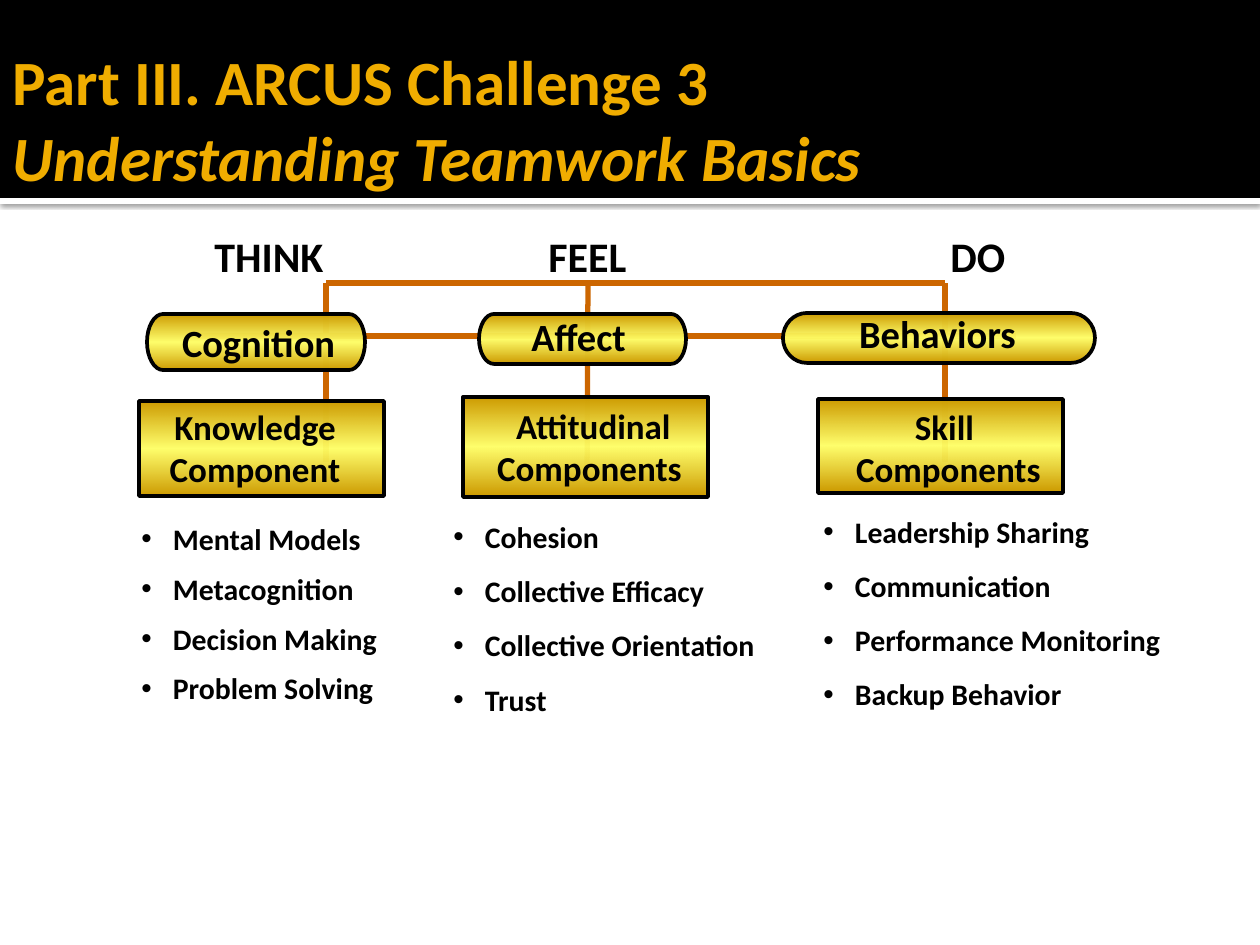
from lxml import etree
from pptx import Presentation
from pptx.dml.color import RGBColor
from pptx.enum.shapes import MSO_CONNECTOR, MSO_SHAPE
from pptx.enum.text import MSO_ANCHOR, MSO_AUTO_SIZE, PP_ALIGN
from pptx.oxml import parse_xml
from pptx.oxml.ns import nsdecls, qn
from pptx.util import Emu, Pt

RECT, STRAIGHT = MSO_SHAPE.RECTANGLE, MSO_CONNECTOR.STRAIGHT
LEFT, CENTER = PP_ALIGN.LEFT, PP_ALIGN.CENTER
FIXED, GROW = MSO_AUTO_SIZE.NONE, MSO_AUTO_SIZE.SHAPE_TO_FIT_TEXT
MIDDLE = MSO_ANCHOR.MIDDLE
FONT = "Calibri"
COLORS = {"band": "000000", "strip": "FFFFFF", "title": "F0AD00", "text": "000000",
          "connector": "CC6600", "outline": "000000", "gold": "CC9900", "yellow": "FFFF66"}
WIDTH, HEIGHT = 1260, 945
BAND_HEIGHT, STRIP_HEIGHT = 198, 6
ARC = 0.55  # control point distance of a quarter ellipse

TITLE_LINES = ("Part III. ARCUS Challenge 3", "Understanding Teamwork Basics")

# Every box is (left, top, width, height) in px.
COLUMNS = [
    {"heading": "THINK", "heading_box": (202, 224, 135, 63),
     "aspect": "Cognition", "pill": (147, 314, 218, 56), "end": 16,
     "aspect_box": (155, 319, 207, 47),
     "component": "Knowledge\vComponent", "card": (139, 401, 245, 95),
     "component_box": (165, 405, 180, 84), "component_wrap": False,
     "items": ["Mental Models", "Metacognition", "Decision Making", "Problem Solving"],
     "items_box": (129, 511, 301, 203), "gap": 6},
    {"heading": "FEEL", "heading_box": (536, 224, 105, 63),
     "aspect": "Affect", "pill": (479, 314, 207, 50), "end": 15,
     "aspect_box": (486, 313, 185, 47),
     "component": "Attitudinal\nComponents ", "card": (463, 397, 245, 100),
     "component_box": (494, 405, 199, 84), "component_wrap": True,
     "items": ["Cohesion", "Collective Efficacy", "Collective Orientation", "Trust"],
     "items_box": (441, 509, 349, 224), "gap": 8.5},
    {"heading": "DO", "heading_box": (938, 224, 81, 63),
     "aspect": "Behaviors", "pill": (783, 313, 312, 50), "end": 24,
     "aspect_box": (790, 310, 295, 47),
     "component": "Skill \nComponents", "card": (818, 399, 245, 94),
     "component_box": (847, 406, 203, 84), "component_wrap": True,
     "items": ["Leadership Sharing", "Communication", "Performance Monitoring",
               "Backup Behavior"],
     "items_box": (811, 504, 386, 224), "gap": 8.5},
]
CONNECTORS = [(197, 336, 1016, 336), (945, 462, 945, 283), (326, 462, 326, 283),
              (587, 484, 588, 283), (326, 283, 945, 283)]


def px(value):
    return Emu(round(value * 914400 / 126))


def place(box):
    return [px(value) for value in box]


def color(name):
    return RGBColor.from_string(COLORS[name])


def add_bar(slide, box, fill):
    bar = slide.shapes.add_shape(RECT, *place(box))
    bar.shadow.inherit = False
    bar.fill.solid()
    bar.fill.fore_color.rgb = color(fill)
    bar.line.fill.background()
    return bar


def add_connector(slide, ends):
    connector = slide.shapes.add_connector(STRAIGHT, *place(ends))
    connector.line.color.rgb = color("connector")
    connector.line.width = Pt(3)
    etree.SubElement(connector._element.spPr, qn("a:effectLst"))


def style_gold(shape):
    """Give a shape the gold-yellow-gold vertical gradient and black outline."""
    shape.shadow.inherit = False
    shape.fill.background()
    shape.line.color.rgb = color("outline")
    shape.line.width = Pt(2.13)
    properties = shape._element.spPr
    gradient = parse_xml(
        f'<a:gradFill rotWithShape="1" {nsdecls("a")}><a:gsLst>'
        f'<a:gs pos="0"><a:srgbClr val="{COLORS["gold"]}"/></a:gs>'
        f'<a:gs pos="50000"><a:srgbClr val="{COLORS["yellow"]}">'
        f'<a:alpha val="95000"/></a:srgbClr></a:gs>'
        f'<a:gs pos="100000"><a:srgbClr val="{COLORS["gold"]}"/></a:gs>'
        f'</a:gsLst><a:lin ang="5400000" scaled="1"/></a:gradFill>')
    properties.replace(properties.find(qn("a:noFill")), gradient)


def add_pill(slide, box, end):
    """Draw a bar whose two ends are half ellipses of the given width."""
    left, top, width, height = box
    right, bottom, middle = left + width, top + height, top + height / 2
    corners = [(left + end, bottom), (right - end, bottom), (right, middle),
               (right - end, top), (left + end, top), (left, middle), (left + end, bottom)]
    points = [(px(x), px(y)) for x, y in corners]
    builder = slide.shapes.build_freeform(*points[0])
    builder.add_line_segments(points[1:], close=True)
    pill = builder.convert_to_shape()
    segments = list(pill._element.spPr.iter(qn("a:lnTo")))
    for index in (1, 2, 4, 5):
        start, stop = points[index], points[index + 1]
        side = start if index in (2, 5) else stop
        tip = (side[0], stop[1] if side is start else start[1])
        controls = [[p + ARC * (t - p) for p, t in zip(point, tip)]
                    for point in (start, stop)]
        curve = etree.Element(qn("a:cubicBezTo"))
        for x, y in (*controls, stop):
            etree.SubElement(curve, qn("a:pt"), x=str(round(x - pill.left)),
                             y=str(round(y - pill.top)))
        segments[index].getparent().replace(segments[index], curve)
    style_gold(pill)


def add_text(slide, box, text, size, align=CENTER, wrap=True, inset=True, gap=None):
    """Add bold text; a gap in points makes the lines a bulleted list."""
    frame = slide.shapes.add_textbox(*place(box)).text_frame
    frame.word_wrap = wrap
    frame.auto_size = GROW
    if not inset:
        frame.margin_left = frame.margin_right = frame.margin_top = frame.margin_bottom = 0
    frame.text = text
    for index, paragraph in enumerate(frame.paragraphs):
        paragraph.alignment = align
        if gap:
            paragraph.line_spacing = 1.1
            if index:
                paragraph.space_before = Pt(gap)
            properties = paragraph._p.get_or_add_pPr()
            properties.set("marL", "228600")
            properties.set("indent", "-228600")
            etree.SubElement(properties, qn("a:buFont"), typeface="Arial")
            etree.SubElement(properties, qn("a:buChar"), char="•")
        paragraph.font.name = FONT
        paragraph.font.size = Pt(size)
        paragraph.font.bold = True
        paragraph.font.color.rgb = color("text")


def add_header(slide):
    strip = add_bar(slide, (0, BAND_HEIGHT, WIDTH, STRIP_HEIGHT), "strip")
    strip._element.spPr.find(qn("a:effectLst")).append(parse_xml(
        f'<a:outerShdw {nsdecls("a")} blurRad="31750" dist="10160" dir="5400000" '
        'rotWithShape="0"><a:srgbClr val="000000"><a:alpha val="60000"/></a:srgbClr>'
        '</a:outerShdw>'))
    add_bar(slide, (0, 0, WIDTH, BAND_HEIGHT), "band")

    title = slide.shapes.title
    title.left, title.top, title.width, title.height = place((0, 60, 1239, 116))
    slide.shapes._spTree.append(title._element)
    frame = title.text_frame
    frame.auto_size = FIXED
    frame.vertical_anchor = MIDDLE
    frame.margin_left = Pt(7.2)
    frame.margin_right = frame.margin_top = frame.margin_bottom = Pt(3.6)
    frame.text = "\v".join(TITLE_LINES)
    heading = frame.paragraphs[0]
    heading.alignment = LEFT
    heading.font.name = FONT
    heading.font.size = Pt(36)
    heading.font.bold = True
    heading.font.color.rgb = color("title")
    heading.runs[1].font.italic = True


def main():
    deck = Presentation()
    deck.slide_width, deck.slide_height = px(WIDTH), px(HEIGHT)
    slide = deck.slides.add_slide(deck.slide_layouts[5])
    add_header(slide)
    for ends in CONNECTORS:
        add_connector(slide, ends)
    for column in COLUMNS:
        add_text(slide, column["heading_box"], column["heading"], 24, LEFT, wrap=False)
        add_pill(slide, column["pill"], column["end"])
        add_text(slide, column["aspect_box"], column["aspect"], 22, inset=False)
        style_gold(slide.shapes.add_shape(RECT, *place(column["card"])))
        add_text(slide, column["component_box"], column["component"], 20,
                 wrap=column["component_wrap"], inset=False)
        add_text(slide, column["items_box"], "\n".join(column["items"]), 17, LEFT,
                 gap=column["gap"])
    deck.save("out.pptx")


if __name__ == "__main__":
    main()
